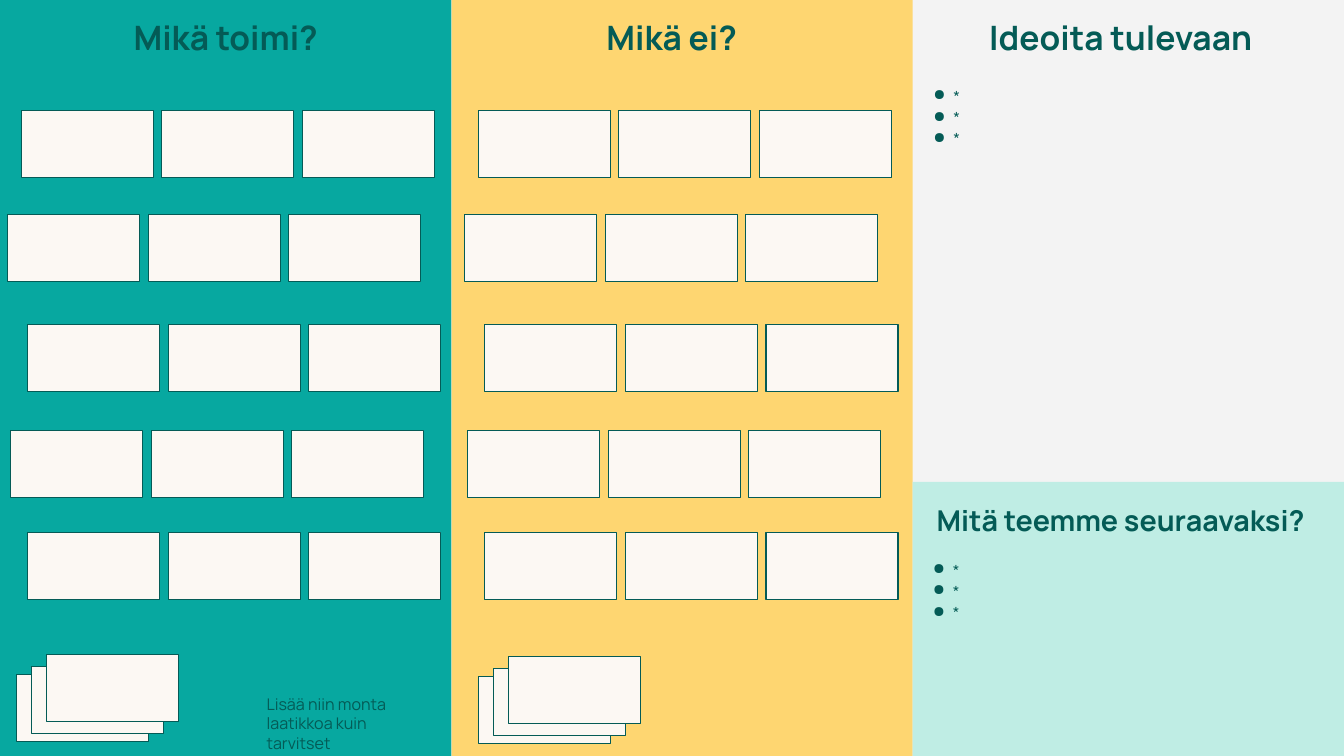
from typing import NamedTuple

from lxml import etree
from pptx import Presentation
from pptx.dml.color import RGBColor
from pptx.enum.shapes import MSO_SHAPE
from pptx.enum.text import MSO_ANCHOR, PP_ALIGN
from pptx.oxml.ns import qn
from pptx.util import Emu, Pt

EMU_PER_PX = 9144  # 100 px to the inch
RECTANGLE = MSO_SHAPE.RECTANGLE
TOP = MSO_ANCHOR.TOP
LEFT, CENTER = PP_ALIGN.LEFT, PP_ALIGN.CENTER

TEAL = RGBColor(0x07, 0xA8, 0xA0)
YELLOW = RGBColor(0xFE, 0xD6, 0x71)
MINT = RGBColor(0xBF, 0xED, 0xE4)
GREY = RGBColor(0xF3, 0xF3, 0xF3)
CREAM = RGBColor(0xFC, 0xF8, 0xF3)
DARK_GREEN = RGBColor(0x04, 0x5B, 0x56)
FONT = "Manrope"

NOTE_WIDTH, NOTE_HEIGHT, NOTE_PITCH = 262, 133, 279
NOTES_PER_ROW = 3
STACK_STEPS = [(0, 0), (30, -16), (60, -40)]


class Area(NamedTuple):
    left: int
    top: int
    width: int
    height: int


class Panel(NamedTuple):
    area: Area
    fill: RGBColor


class Heading(NamedTuple):
    text: str
    area: Area
    size: int


class Point(NamedTuple):
    left: int
    top: int


PANELS = [
    Panel(Area(0, 0, 896, 1500), TEAL),
    Panel(Area(896, 0, 915, 1500), YELLOW),
    Panel(Area(1811, 956, 856, 544), MINT),
]
HEADINGS = [
    Heading("Mikä toimi?", Area(0, 23, 896, 101), 48),
    Heading("Mikä ei?", Area(896, 23, 874, 101), 48),
    Heading("Ideoita tulevaan", Area(1782, 23, 884, 101), 48),
    Heading("Mitä teemme seuraavaksi?", Area(1782, 987, 884, 101), 41),
]
BULLET_AREAS = [Area(1822, 157, 845, 362), Area(1821, 1097, 845, 362)]
HINT_AREA = Area(509, 1358, 345, 101)
ROW_STARTS = [Point(42, 219), Point(15, 426), Point(55, 643), Point(21, 854), Point(55, 1056)]
BOARD_OFFSETS = [0, 907]
STACK_STARTS = [Point(32, 1338), Point(949, 1342)]


def px(length: int) -> Emu:
    return Emu(length * EMU_PER_PX)


def add_rectangle(slide, area: Area, fill: RGBColor, outline: RGBColor | None = None) -> None:
    box = slide.shapes.add_shape(RECTANGLE, *map(px, area))
    box.shadow.inherit = False
    box.fill.solid()
    box.fill.fore_color.rgb = fill
    if outline is None:
        box.line.fill.background()
    else:
        box.line.color.rgb = outline
        box.line.width = Pt(1.5)


def add_bullet(para) -> None:
    properties = para._p.get_or_add_pPr()
    properties.set("marL", str(px(50)))
    properties.set("indent", str(px(-40)))
    color = etree.SubElement(properties, qn("a:buClr"))
    etree.SubElement(color, qn("a:srgbClr"), val=str(DARK_GREEN))
    etree.SubElement(properties, qn("a:buChar"), char="●")


def add_text(slide, area: Area, lines: list[str], *, size: int, bold: bool = False,
             align: PP_ALIGN = LEFT, inset: int = 10, bulleted: bool = False) -> None:
    frame = slide.shapes.add_textbox(*map(px, area)).text_frame
    frame.word_wrap = True
    frame.vertical_anchor = TOP
    frame.margin_left = frame.margin_right = px(20)
    frame.margin_top = frame.margin_bottom = px(inset)
    for index, line in enumerate(lines):
        para = frame.add_paragraph() if index else frame.paragraphs[0]
        para.alignment = align
        if bulleted:
            add_bullet(para)
            para.line_spacing = 1.15
        span = para.add_run()
        span.text = line
        span.font.name = FONT
        span.font.size = Pt(size)
        span.font.bold = bold
        span.font.color.rgb = DARK_GREEN


def add_note(slide, left: int, top: int) -> None:
    add_rectangle(slide, Area(left, top, NOTE_WIDTH, NOTE_HEIGHT), CREAM, DARK_GREEN)


def add_note_rows(slide, offset: int) -> None:
    for start in ROW_STARTS:
        for column in range(NOTES_PER_ROW):
            add_note(slide, offset + start.left + column * NOTE_PITCH, start.top)


def add_note_stack(slide, start: Point) -> None:
    for right, down in STACK_STEPS:
        add_note(slide, start.left + right, start.top + down)


def main() -> None:
    deck = Presentation()
    deck.slide_width, deck.slide_height = px(2667), px(1500)
    page = deck.slides.add_slide(deck.slide_layouts[6])
    page.background.fill.solid()
    page.background.fill.fore_color.rgb = GREY

    for panel in PANELS:
        add_rectangle(page, panel.area, panel.fill)
    for heading in HEADINGS:
        add_text(page, heading.area, [heading.text], size=heading.size, bold=True, align=CENTER)
    add_text(page, HINT_AREA, ["Lisää niin monta laatikkoa kuin tarvitset"], size=23, inset=20)
    for area in BULLET_AREAS:
        add_text(page, area, ["*"] * 3, size=22, bulleted=True)
    for offset in BOARD_OFFSETS:
        add_note_rows(page, offset)
    for start in STACK_STARTS:
        add_note_stack(page, start)

    deck.save("out.pptx")


if __name__ == "__main__":
    main()
